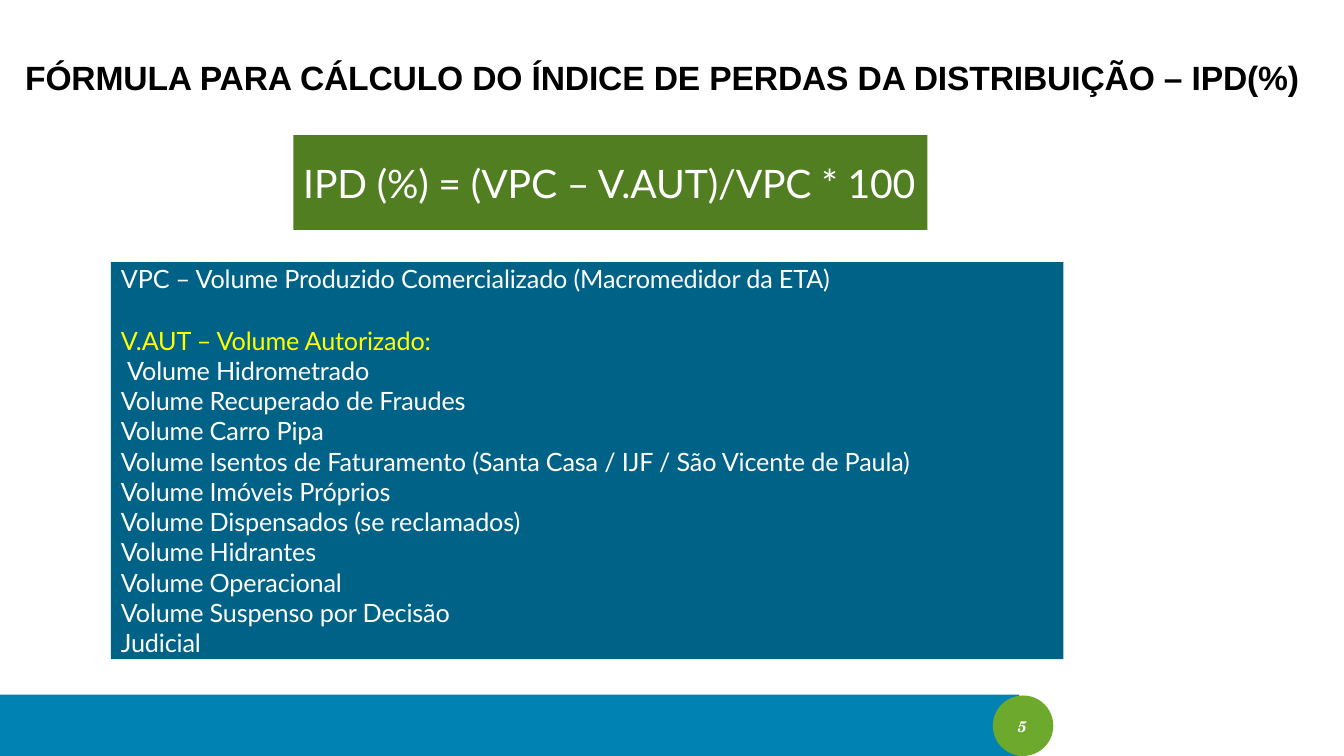
import pptx
import pptx.dml.color
import pptx.enum.shapes
import pptx.enum.text
import pptx.util

Pt = pptx.util.Pt
RGBColor = pptx.dml.color.RGBColor
Shape = pptx.enum.shapes.MSO_SHAPE
Anchor = pptx.enum.text.MSO_ANCHOR

BLACK = RGBColor(0x00, 0x00, 0x00)
WHITE = RGBColor(0xFF, 0xFF, 0xFF)
YELLOW = RGBColor(0xFF, 0xFF, 0x00)
BLUE = RGBColor(0x00, 0x83, 0xB3)
DARK_BLUE = RGBColor(0x00, 0x62, 0x86)
GREEN = RGBColor(0x6C, 0xA9, 0x2C)
DARK_GREEN = RGBColor(0x51, 0x7E, 0x21)

AUTHORIZED_VOLUMES = [
    "Volume Recuperado de Fraudes",
    "Volume Carro Pipa",
    "Volume Isentos de Faturamento (Santa Casa / IJF / São Vicente de Paula)",
    "Volume Imóveis Próprios",
    "Volume Dispensados (se reclamados)",
    "Volume Hidrantes",
    "Volume Operacional",
    "Volume Suspenso por Decisão\vJudicial",
]


def write(para, text, font="Lato", size=18, color=WHITE, bold=False,
          italic=False, before=0, indent=0, spacing=-0.1):
    """Fill a paragraph with formatted text, lengths in points."""
    properties = para._p.get_or_add_pPr()
    properties.set("marL", str(Pt(indent)))
    properties.set("indent", "0")
    para.alignment = pptx.enum.text.PP_ALIGN.LEFT
    para.space_before = Pt(before)
    para.text = text
    for span in para.runs:
        span.font.name = font
        span.font.size = Pt(size)
        span.font.color.rgb = color
        span.font.bold = bold
        span.font.italic = italic
        span._r.get_or_add_rPr().set("spc", str(round(spacing * 100)))


class Slide:
    """Hold the deck and its current page, and draw elements on it."""

    def __init__(self, width, height):
        self.deck = pptx.Presentation()
        self.deck.slide_width = Pt(width)
        self.deck.slide_height = Pt(height)
        self.page = self.deck.slides.add_slide(self.deck.slide_layouts[6])

    def shape(self, kind, left, top, width, height, color):
        box = self.page.shapes.add_shape(
            kind, Pt(left), Pt(top), Pt(width), Pt(height))
        box.shadow.inherit = False
        box.fill.solid()
        box.fill.fore_color.rgb = color
        box.line.fill.background()
        return box

    def text(self, left, top, width, height, lines):
        box = self.page.shapes.add_textbox(
            Pt(left), Pt(top), Pt(width), Pt(height))
        self.fill_text(box.text_frame, lines)

    def fill_text(self, frame, lines, left=0, anchor=Anchor.TOP):
        frame.word_wrap = True
        frame.vertical_anchor = anchor
        frame.margin_left = Pt(left)
        frame.margin_top = frame.margin_right = frame.margin_bottom = 0
        for index, (text, style) in enumerate(lines):
            para = frame.add_paragraph() if index else frame.paragraphs[0]
            write(para, text, **style)


def main():
    """Build the loss index slide and save it."""
    slide = Slide(960, 540)
    slide.shape(Shape.RECTANGLE, 0, 496.1, 728, 43.9, BLUE)
    slide.shape(Shape.OVAL, 709.2, 496.8, 43.2, 43.2, GREEN)

    title = "FÓRMULA PARA CÁLCULO DO ÍNDICE DE PERDAS DA DISTRIBUIÇÃO – IPD(%)"
    slide.text(18, 41, 917, 31,
               [(title, dict(font="Arial", size=24, color=BLACK, bold=True))])

    formula = slide.shape(Shape.RECTANGLE, 209.5, 96.5, 453, 67.7, DARK_GREEN)
    slide.fill_text(formula.text_frame,
                    [("IPD (%) = (VPC – V.AUT)/VPC * 100", dict(size=28))],
                    left=7.2, anchor=Anchor.MIDDLE)

    slide.shape(Shape.RECTANGLE, 79.2, 187.2, 680.4, 283.7, DARK_BLUE)
    definitions = [
        ("VPC – Volume Produzido Comercializado (Macromedidor da ETA)", {}),
        ("V.AUT – Volume Autorizado:", dict(color=YELLOW, before=22.5)),
        ("Volume Hidrometrado", dict(indent=4.5)),
    ]
    definitions += [(volume, {}) for volume in AUTHORIZED_VOLUMES]
    slide.text(86.4, 188, 595, 282, definitions)

    slide.text(727, 512, 12, 14.4,
               [("5", dict(font="TeX Gyre Schola", size=11, bold=True,
                           italic=True, spacing=0))])
    slide.deck.save("out.pptx")


if __name__ == "__main__":
    main()
